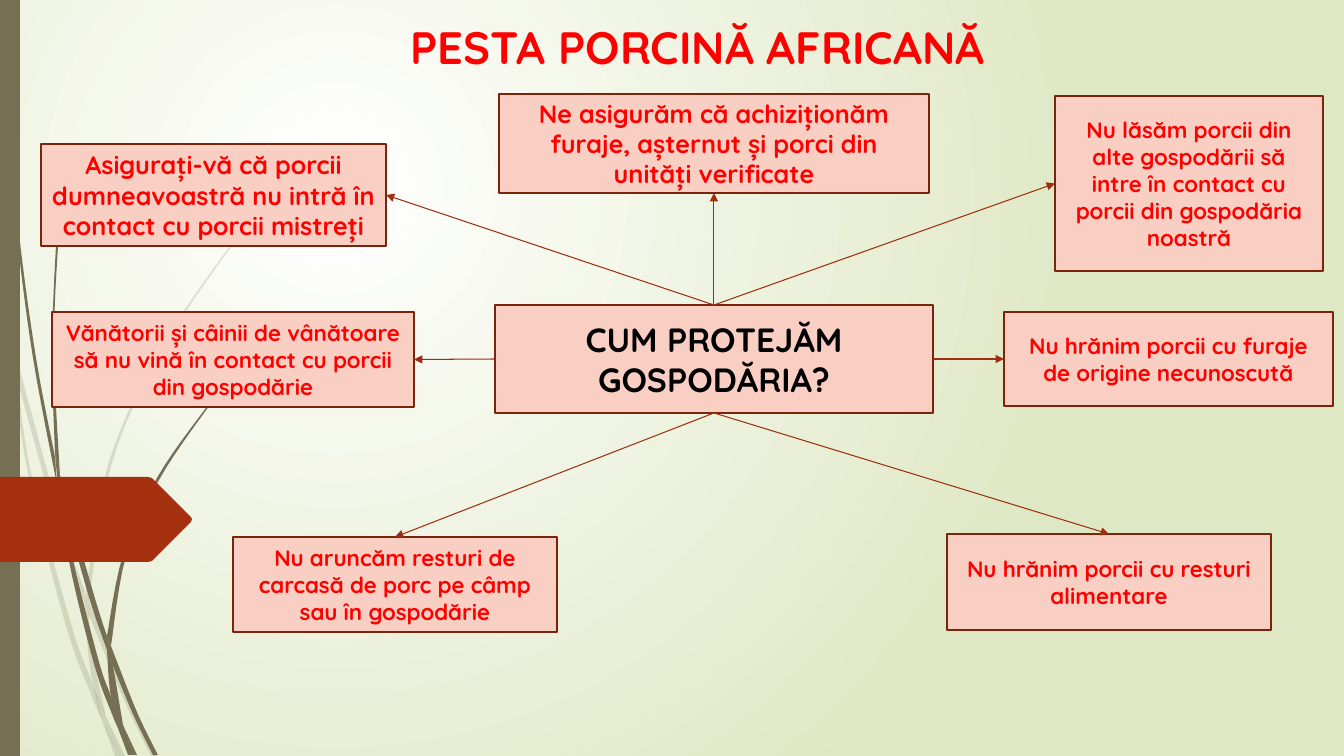
from dataclasses import dataclass
from lxml import etree
from pptx import Presentation
from pptx import util as u
from pptx.dml.color import RGBColor
from pptx.enum import shapes, text
from pptx.oxml.ns import qn

PX = 914400 / 100.8
TOP, LEFT, BOTTOM, RIGHT = range(4)
Point = tuple[float, float]


@dataclass(frozen=True)
class Theme:
    font: str = "Quicksand"
    glow: str = "FFFFFF"
    field: str = "DFE8C4"
    olive: str = "766F54"
    rust: str = "A53010"
    pink: str = "F9CFC3"
    edge: str = "7A240C"
    arrow: str = "9E2E0F"
    red: str = "FF0000"
    black: str = "000000"
    title: float = 32.4
    hub: float = 24
    large: float = 18
    body: float = 16


@dataclass(frozen=True)
class Card:
    words: str
    x: int
    y: int
    w: int
    h: int
    size: float
    out: int = TOP   # side of the hub where the arrow starts
    into: int = TOP  # side of the card where it ends


@dataclass(frozen=True)
class Wisp:
    """One piece of a grass stem, between two curved edges."""
    near: list[Point]
    far: list[Point]


T = Theme()
HUB = Card("CUM PROTEJĂM GOSPODĂRIA?", 495, 305, 438, 108, T.hub)
CARDS = [
    Card("Ne asigurăm că achiziționăm furaje, așternut și porci din unități verificate",
         499, 94, 430, 99, T.large, TOP, BOTTOM),
    Card("Nu hrănim porcii cu resturi alimentare",
         947, 534, 324, 96, T.body, BOTTOM, TOP),
    Card("Nu lăsăm porcii din alte gospodării să intre în contact cu porcii "
         "din gospodăria noastră", 1055, 96, 268, 175, T.body, TOP, LEFT),
    Card("Asigurați-vă că porcii dumneavoastră nu intră în contact cu porcii mistreți",
         41, 144, 345, 102, T.large, TOP, RIGHT),
    Card("Vănătorii și câinii de vânătoare să nu vină în contact cu porcii din gospodărie",
         52, 312, 362, 95, T.body, LEFT, RIGHT),
    Card("Nu aruncăm resturi de carcasă de porc pe câmp sau în gospodărie",
         233, 537, 324, 95, T.body, BOTTOM, TOP),
    Card("Nu hrănim porcii cu furaje de origine necunoscută",
         1004, 312, 329, 94, T.body, RIGHT, LEFT),
]
PALE = [
    Wisp([(11, 353), (9, 325), (0, 284)], [(11, 353), (10, 347), (0, 301)]),
    Wisp([(14, 348), (62, 524), (85, 591)], [(17, 379), (58, 526), (85, 604)]),
    Wisp([(89, 601), (128, 698), (156, 756)], [(89, 615), (124, 700), (151, 756)]),
    Wisp([(106, 717), (125, 756)], [(106, 717), (120, 756)]),
    Wisp([(11, 353), (17, 379), (31, 473), (71, 624), (94, 688), (102, 720)],
         [(11, 353), (28, 474), (66, 626), (93, 699), (102, 720)]),
    Wisp([(85, 604), (88, 651), (94, 688), (106, 717)], [(89, 615), (92, 651), (106, 717)]),
    Wisp([(314, 154), (270, 199), (230, 246), (159, 351), (108, 465), (86, 591)],
         [(314, 155), (270, 200), (231, 247), (161, 352), (111, 466), (89, 601)]),
    Wisp([(102, 720), (115, 756)], [(102, 720), (120, 756)]),
    Wisp([(86, 591), (85, 604)], [(89, 601), (89, 615)]),
    Wisp([(94, 688), (102, 720), (120, 756)], [(94, 688), (106, 717), (120, 756)]),
]
DARK = [
    Wisp([(4, 0), (5, 48), (8, 110), (19, 234), (36, 358), (55, 457)],
         [(3, 0), (4, 48), (7, 111), (17, 235), (33, 358), (57, 485)]),
    Wisp([(60, 476), (94, 595), (107, 636)], [(60, 476), (65, 509), (89, 597), (107, 650)]),
    Wisp([(111, 646), (137, 712), (158, 755)], [(111, 661), (133, 714), (153, 755)]),
    Wisp([(58, 481), (65, 509), (73, 560), (99, 662), (111, 697), (118, 728)],
         [(58, 481), (69, 561), (94, 664), (112, 714), (118, 728)]),
    Wisp([(71, 142), (64, 195), (58, 247), (54, 352), (60, 476)],
         [(71, 142), (62, 195), (56, 247), (52, 352), (55, 453)]),
    Wisp([(123, 725), (137, 755)], [(123, 725), (134, 755)]),
    Wisp([(55, 453), (60, 476), (65, 509)], [(55, 453), (58, 481), (65, 509)]),
    Wisp([(262, 347), (233, 376), (206, 408), (157, 478), (123, 555), (107, 636)],
         [(263, 347), (233, 377), (207, 409), (159, 480), (126, 556), (111, 646)]),
    Wisp([(118, 728), (132, 755)], [(118, 728), (128, 755)]),
    Wisp([(107, 650), (111, 697), (123, 725)], [(107, 650), (112, 661), (123, 725)]),
    Wisp([(107, 636), (107, 650)], [(111, 646), (112, 661)]),
    Wisp([(111, 697), (118, 728), (131, 755)], [(111, 697), (123, 725), (134, 755)]),
]
TAG = [(0, 477), (148, 477), (152, 478), (191, 517), (192, 519), (191, 522),
       (152, 561), (148, 562), (0, 562)]


def emu(px: float) -> int:
    return round(px * PX)


def paint(shape, fill: str, line: str | None = None) -> None:
    shape.shadow.inherit = False
    shape.fill.solid()
    shape.fill.fore_color.rgb = RGBColor.from_string(fill)
    if line:
        shape.line.color.rgb = RGBColor.from_string(line)
        shape.line.width = u.Pt(1.25)
    else:
        shape.line.fill.background()


def write(shape, words: str, size: float, color: str, anchor) -> None:
    frame = shape.text_frame
    frame.word_wrap = True
    frame.vertical_anchor = anchor
    para = frame.paragraphs[0]
    para.text = words
    para.alignment = text.PP_ALIGN.CENTER
    font = para.font
    font.name, font.size, font.bold = T.font, u.Pt(size), True
    font.color.rgb = RGBColor.from_string(color)


def smooth(knots: list[Point], steps: int = 6) -> list[Point]:
    """Catmull-Rom curve through the knots."""
    ends = [knots[0], *knots, knots[-1]]
    curve = [knots[0]]
    for a, b, c, d in zip(ends, ends[1:], ends[2:], ends[3:]):
        for n in range(1, steps + 1):
            t = n / steps
            curve.append(tuple(
                q + t * (r - p) / 2 + t * t * (2 * p - 5 * q + 4 * r - s) / 2
                + t ** 3 * (3 * q - p - 3 * r + s) / 2
                for p, q, r, s in zip(a, b, c, d)))
    return curve


def outline(slide, points: list[Point], fill: str, alpha: int = 100) -> None:
    first, *rest = [(emu(x), emu(y)) for x, y in points]
    pen = slide.shapes.build_freeform(*first)
    pen.add_line_segments(rest, close=True)
    shape = pen.convert_to_shape()
    paint(shape, fill)
    if alpha < 100:
        tone = shape.element.spPr.find(qn("a:solidFill"))[0]
        etree.SubElement(tone, qn("a:alpha"), val=str(alpha * 1000))


def block(slide, x: int, y: int, w: int, h: int, fill: str, line: str | None = None):
    shape = slide.shapes.add_shape(shapes.MSO_SHAPE.RECTANGLE, *map(emu, (x, y, w, h)))
    paint(shape, fill, line)
    return shape


def place(slide, card: Card, color: str):
    shape = block(slide, card.x, card.y, card.w, card.h, T.pink, T.edge)
    write(shape, card.words, card.size, color, text.MSO_ANCHOR.MIDDLE)
    return shape


def link(slide, hub, goal, card: Card) -> None:
    line = slide.shapes.add_connector(shapes.MSO_CONNECTOR.STRAIGHT, 0, 0, 0, 0)
    line.begin_connect(hub, card.out)
    line.end_connect(goal, card.into)
    line.line.color.rgb = RGBColor.from_string(T.arrow)
    line.line.width = u.Pt(0.75)
    etree.SubElement(line.line._get_or_add_ln(), qn("a:tailEnd"), type="triangle")
    etree.SubElement(line._element.spPr, qn("a:effectLst"))


def backdrop(slide) -> None:
    """Round gradient from a pale glow to green."""
    fill = slide.background.fill
    fill.gradient()
    for stop, tone in zip(fill.gradient_stops, (T.glow, T.field)):
        stop.color.rgb = RGBColor.from_string(tone)
    grad = slide.element.find(".//" + qn("a:gradFill"))
    grad.remove(grad.find(qn("a:lin")))
    ring = etree.SubElement(grad, qn("a:path"), path="circle")
    etree.SubElement(ring, qn("a:fillToRect"), l="50000", t="50000", r="100000", b="100000")


def main() -> None:
    deck = Presentation()
    deck.slide_width, deck.slide_height = emu(1344), emu(756)
    slide = deck.slides.add_slide(deck.slide_layouts[6])
    backdrop(slide)
    for wisps, alpha in ((PALE, 20), (DARK, 100)):
        for wisp in wisps:
            outline(slide, smooth(wisp.near) + smooth(wisp.far)[::-1], T.olive, alpha)
    block(slide, 0, 0, 20, 756, T.olive)
    outline(slide, TAG, T.rust)
    title = slide.shapes.add_textbox(*map(emu, (278, 8, 839, 125)))
    title.text_frame.margin_top = emu(11)
    write(title, "PESTA PORCINĂ AFRICANĂ", T.title, T.red, text.MSO_ANCHOR.TOP)
    hub = place(slide, HUB, T.black)
    for card in CARDS:
        link(slide, hub, place(slide, card, T.red), card)
    deck.save("out.pptx")


if __name__ == "__main__":
    main()
